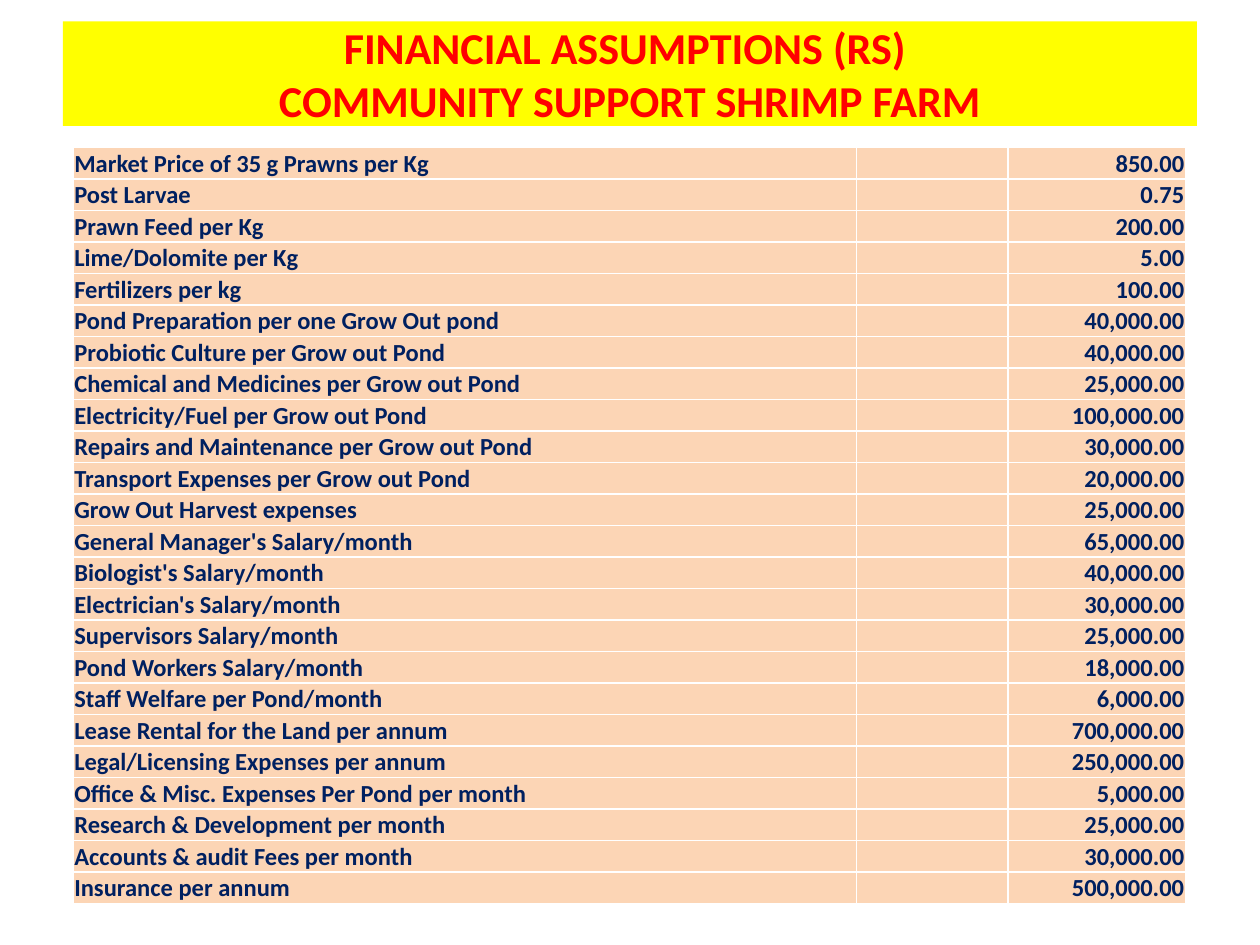
"""Build the shrimp farm financial assumptions slide."""
from lxml import etree
from pptx import Presentation
from pptx import util as u
from pptx.dml.color import RGBColor
from pptx.enum import shapes, text
from pptx.oxml.ns import qn

RED = RGBColor(0xFF, 0x00, 0x00)
YELLOW = RGBColor(0xFF, 0xFF, 0x00)
NAVY = RGBColor(0x00, 0x20, 0x60)
PEACH = RGBColor(0xFC, 0xD5, 0xB5)
WHITE = RGBColor(0xFF, 0xFF, 0xFF)

FONT = "Calibri"
ROW_HEIGHT = 0.25
COLUMN_WIDTHS = (6.22, 1.2, 1.41)
ASSUMPTIONS = [
    ("Market Price of 35 g Prawns per Kg", 850),
    ("Post Larvae", 0.75),
    ("Prawn Feed per Kg", 200),
    ("Lime/Dolomite per Kg", 5),
    ("Fertilizers per kg", 100),
    ("Pond Preparation per one Grow Out pond", 40000),
    ("Probiotic Culture per Grow out Pond", 40000),
    ("Chemical and Medicines per Grow out Pond", 25000),
    ("Electricity/Fuel per Grow out Pond", 100000),
    ("Repairs and Maintenance per Grow out Pond", 30000),
    ("Transport Expenses per Grow out Pond", 20000),
    ("Grow Out Harvest expenses", 25000),
    ("General Manager's Salary/month", 65000),
    ("Biologist's Salary/month", 40000),
    ("Electrician's Salary/month", 30000),
    ("Supervisors Salary/month", 25000),
    ("Pond Workers Salary/month", 18000),
    ("Staff Welfare per Pond/month", 6000),
    ("Lease Rental for the Land per annum", 700000),
    ("Legal/Licensing Expenses per annum", 250000),
    ("Office & Misc. Expenses Per Pond per month", 5000),
    ("Research & Development per month", 25000),
    ("Accounts & audit Fees per month", 30000),
    ("Insurance per annum", 500000),
]


def format_paragraph(para, size, color, align):
    """Align a paragraph and give its runs the slide's bold font."""
    para.alignment = align
    for span in para.runs:
        span.font.name = FONT
        span.font.size = u.Pt(size)
        span.font.bold = True
        span.font.color.rgb = color


def add_title(page, wording):
    """Add the yellow title banner."""
    box = page.shapes.add_shape(
        shapes.MSO_SHAPE.RECTANGLE,
        u.Inches(0.5), u.Inches(0.17), u.Inches(9), u.Inches(0.83))
    box.shadow.inherit = False
    box.fill.solid()
    box.fill.fore_color.rgb = YELLOW
    box.line.fill.background()
    frame = box.text_frame
    frame.word_wrap = True
    frame.vertical_anchor = text.MSO_ANCHOR.MIDDLE
    frame.text = wording
    format_paragraph(frame.paragraphs[0], 25.2, RED, text.PP_ALIGN.CENTER)


def add_borders(cell):
    """Draw thin white lines on all four sides of a cell."""
    properties = cell._tc.get_or_add_tcPr()
    for index, side in enumerate(("lnL", "lnR", "lnT", "lnB")):
        line = etree.Element(qn(f"a:{side}"), w=str(u.Pt(1)))
        fill = etree.SubElement(line, qn("a:solidFill"))
        etree.SubElement(fill, qn("a:srgbClr"), val=str(WHITE))
        properties.insert(index, line)


def fill_cell(cell, wording, align):
    """Write and style one table cell."""
    cell.margin_left = cell.margin_right = cell.margin_top = u.Inches(0.01)
    cell.margin_bottom = 0
    cell.vertical_anchor = text.MSO_ANCHOR.BOTTOM
    cell.fill.solid()
    cell.fill.fore_color.rgb = PEACH
    add_borders(cell)
    cell.text = wording
    para = cell.text_frame.paragraphs[0]
    format_paragraph(para, 14, NAVY, align)
    if not wording:
        etree.SubElement(para._p, qn("a:endParaRPr"), sz="1400")


def add_assumptions(page, rows):
    """Add the table of labels and amounts."""
    table = page.shapes.add_table(
        len(rows), len(COLUMN_WIDTHS), u.Inches(0.58), u.Inches(1.17),
        u.Inches(sum(COLUMN_WIDTHS)), u.Inches(ROW_HEIGHT * len(rows))).table
    table.first_row = table.horz_banding = False
    for column, width in zip(table.columns, COLUMN_WIDTHS):
        column.width = u.Inches(width)
    for row, (label, amount) in zip(table.rows, rows):
        row.height = u.Inches(ROW_HEIGHT)
        name, gap, value = row.cells
        fill_cell(name, label, text.PP_ALIGN.LEFT)
        fill_cell(gap, "", text.PP_ALIGN.LEFT)
        fill_cell(value, f"{amount:,.2f}", text.PP_ALIGN.RIGHT)


def main():
    """Build and save the deck."""
    deck = Presentation()
    deck.slide_width, deck.slide_height = u.Inches(10), u.Inches(7.5)
    page = deck.slides.add_slide(deck.slide_layouts[6])
    add_title(page, "FINANCIAL ASSUMPTIONS (RS) \vCOMMUNITY SUPPORT SHRIMP FARM")
    add_assumptions(page, ASSUMPTIONS)
    deck.save("out.pptx")


if __name__ == "__main__":
    main()
